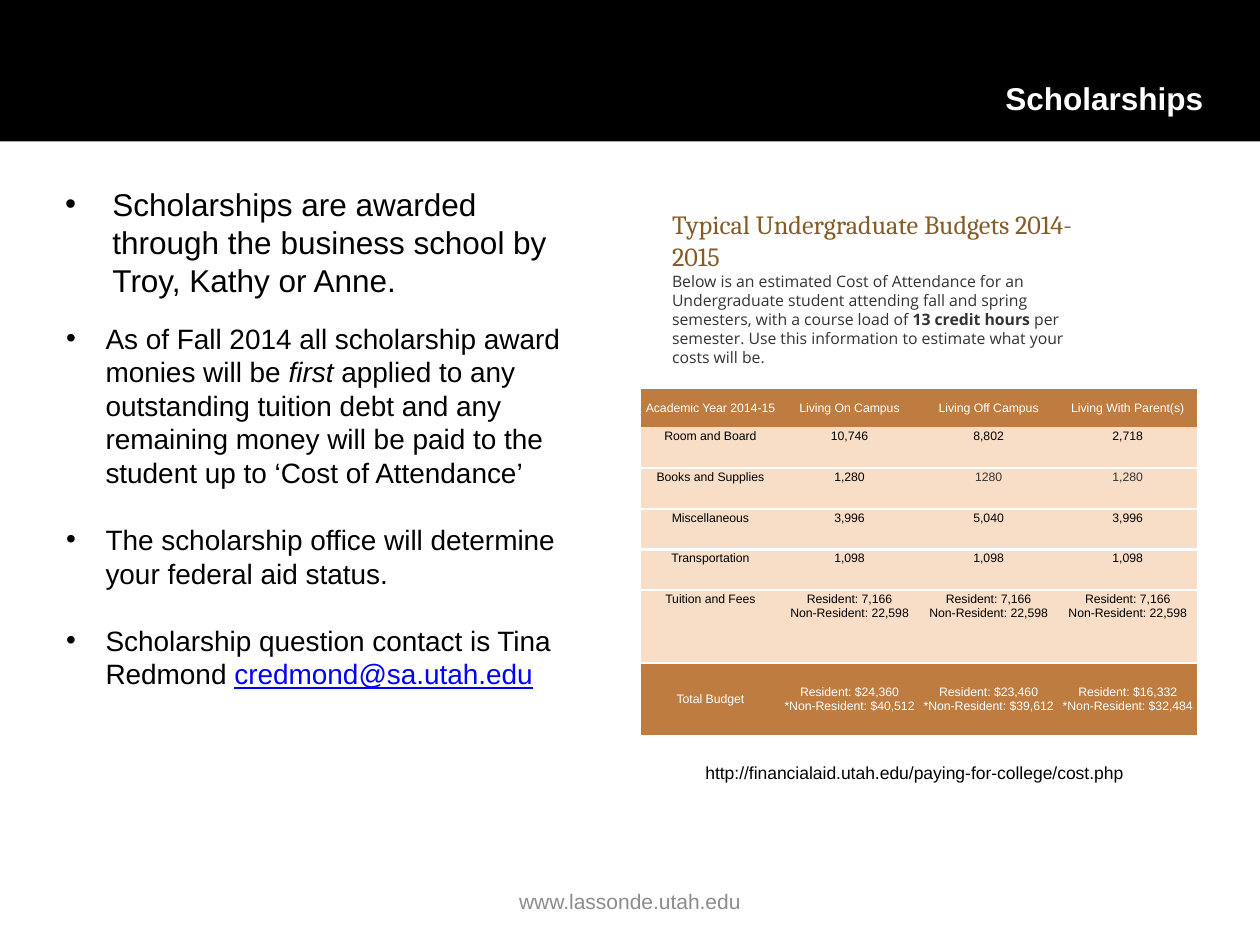
from lxml.etree import SubElement
from pptx import Presentation
from pptx.dml.color import RGBColor
from pptx.enum.shapes import MSO_SHAPE as Shape
from pptx.enum.text import MSO_ANCHOR as Anchor, PP_ALIGN as Align
from pptx.oxml.ns import qn
from pptx.util import Pt

COLORS = {
    "black": "000000", "white": "FFFFFF", "footer": "8C8C8C", "link": "0000FF",
    "heading": "855B27", "body": "333333", "band": "BF7C40", "row": "F8DEC7",
}
BUDGET = [
    ["Academic Year 2014-15", "Living On Campus", "Living Off Campus", "Living With Parent(s)"],
    ["Room and Board", "10,746", "8,802", "2,718"],
    ["Books and Supplies", "1,280", "1280", "1,280"],
    ["Miscellaneous", "3,996", "5,040", "3,996"],
    ["Transportation", "1,098", "1,098", "1,098"],
    ["Tuition and Fees"] + ["Resident: 7,166\nNon-Resident: 22,598"] * 3,
    ["Total Budget", "Resident: $24,360\n*Non-Resident: $40,512",
     "Resident: $23,460\n*Non-Resident: $39,612", "Resident: $16,332\n*Non-Resident: $32,484"],
]
ROW_HEIGHTS = [22] + [23.3] * 4 + [41.4] * 2
GRAY_CELLS = {(2, 2), (2, 3)}
PLAIN_TABLE_STYLE = "{2D5ABB26-0587-4C30-8999-92F81FD0307C}"


def rgb(name):
    """Return the named colour."""
    return RGBColor.from_string(COLORS[name])


def add_bullet(paragraph, indent):
    """Give a paragraph a hanging round bullet."""
    properties = paragraph._p.get_or_add_pPr()
    properties.set("marL", str(Pt(indent)))
    properties.set("indent", str(-Pt(indent)))
    SubElement(properties, qn("a:buFont"), typeface="Arial")
    SubElement(properties, qn("a:buChar"), char="•")


def write(frame, runs, size=16, color="black", font="Arial", align=Align.LEFT,
          bold=False, indent=0, after=0, new=False):
    """Write one paragraph of (text, run format) pairs into a text frame."""
    paragraph = frame.add_paragraph() if new else frame.paragraphs[0]
    paragraph.alignment = align
    paragraph.space_before = Pt(0)
    paragraph.space_after = Pt(after)
    if indent:
        add_bullet(paragraph, indent)
    for text, style in [(runs, {})] if isinstance(runs, str) else runs:
        for number, line in enumerate(text.split("\n")):
            if number:
                paragraph.add_line_break()
            run = paragraph.add_run()
            run.text = line
            run.font.name, run.font.size = font, Pt(size)
            run.font.color.rgb = rgb(style.get("color", color))
            run.font.bold = style.get("bold", bold)
            run.font.italic = style.get("italic", False)
            run.font.underline = style.get("underline", False)
    paragraph.font.size = Pt(size)


def add_text_box(slide, left, top, width, height, anchor=Anchor.TOP, inset=None):
    """Add a wrapping text box and return its text frame."""
    frame = slide.shapes.add_textbox(Pt(left), Pt(top), Pt(width), Pt(height)).text_frame
    frame.word_wrap = True
    frame.vertical_anchor = anchor
    if inset is not None:
        frame.margin_left = frame.margin_right = Pt(inset)
        frame.margin_top = frame.margin_bottom = Pt(inset)
    return frame


def add_header(slide):
    """Add the black band and the title on it."""
    band = slide.shapes.add_shape(Shape.RECTANGLE, 0, 0, Pt(720), Pt(80.8))
    band.shadow.inherit = False
    band.fill.solid()
    band.fill.fore_color.rgb = rgb("black")
    band.line.fill.background()
    title = slide.shapes.title
    title.left, title.top, title.width, title.height = Pt(522), Pt(41.8), Pt(172.8), Pt(36)
    title.text_frame.vertical_anchor = Anchor.TOP
    write(title.text_frame, "Scholarships", size=18, color="white", bold=True,
          align=Align.RIGHT)
    slide.shapes._spTree.append(title._element)


def add_awards(slide):
    """Add the bulleted scholarship rules."""
    intro = add_text_box(slide, 30.2, 102.2, 311.8, 75)
    write(intro, "Scholarships are awarded through the business school by Troy, Kathy or Anne.",
          size=18, indent=27)
    rules = add_text_box(slide, 30.7, 180, 306, 240)
    items = [
        [("As of Fall 2014 all scholarship award monies will be ", {}),
         ("first ", {"italic": True}),
         ("applied to any outstanding tuition debt and any remaining money "
          "will be paid to the student up to ‘Cost of Attendance’", {})],
        "The scholarship office will determine your federal aid status.",
        [("Scholarship question contact is Tina Redmond ", {}),
         ("credmond@sa.utah.edu", {"color": "link", "underline": True})],
    ]
    for index, item in enumerate(items):
        write(rules, item, indent=22.5, new=index > 0,
              after=19.1 if index < len(items) - 1 else 0)


def add_border(cell, edge):
    """Draw a white line on one edge of a cell."""
    properties = cell._tc.get_or_add_tcPr()
    line = properties.makeelement(qn(f"a:{edge}"), {"w": str(Pt(1.5))})
    fill = SubElement(line, qn("a:solidFill"))
    SubElement(fill, qn("a:srgbClr"), val=COLORS["white"])
    properties.insert(0, line)


def add_budget(slide):
    """Add the table of estimated costs."""
    last = len(BUDGET) - 1
    table = slide.shapes.add_table(len(BUDGET), len(BUDGET[0]), Pt(366.2), Pt(222.2),
                                   Pt(318), Pt(sum(ROW_HEIGHTS))).table
    table._tbl.tblPr.find(qn("a:tableStyleId")).text = PLAIN_TABLE_STYLE
    for row, height in zip(table.rows, ROW_HEIGHTS):
        row.height = Pt(height)
    for r, values in enumerate(BUDGET):
        banded = r in (0, last)
        for c, value in enumerate(values):
            cell = table.cell(r, c)
            cell.margin_left = cell.margin_right = Pt(2.6)
            cell.margin_top = cell.margin_bottom = Pt(1.3)
            cell.vertical_anchor = Anchor.MIDDLE if banded else Anchor.TOP
            cell.fill.solid()
            cell.fill.fore_color.rgb = rgb("band" if banded else "row")
            if 0 < r < last:
                add_border(cell, "lnB")
            if r > 1:
                add_border(cell, "lnT")
            color = "white" if banded else "body" if (r, c) in GRAY_CELLS else "black"
            write(cell.text_frame, value, size=7, color=color, align=Align.CENTER)


def add_budget_notes(slide):
    """Add the introduction above the table and the address below it."""
    intro = add_text_box(slide, 384, 119, 234, 90.7, Anchor.MIDDLE, inset=0)
    write(intro, "Typical Undergraduate Budgets 2014-2015", size=15, color="heading",
          font="Cambria")
    write(intro, [
        ("Below is an estimated Cost of Attendance for an Undergraduate student attending "
         "fall and spring semesters, with a course load of ", {}),
        ("13 credit hours", {"bold": True}),
        (" per semester. Use this information to estimate what your costs will be.", {}),
    ], size=9, color="body", font="Open Sans", new=True)
    address = add_text_box(slide, 396, 432, 258, 19.4)
    write(address, "http://financialaid.utah.edu/paying-for-college/cost.php", size=10)


def main():
    """Build and save the scholarships slide."""
    deck = Presentation()
    deck.slide_width, deck.slide_height = Pt(720), Pt(540)
    slide = deck.slides.add_slide(deck.slide_layouts[5])
    add_header(slide)
    add_awards(slide)
    footer = add_text_box(slide, 246, 500.5, 228, 28.8, Anchor.MIDDLE)
    write(footer, "www.lassonde.utah.edu", size=12, color="footer", align=Align.CENTER)
    add_budget(slide)
    add_budget_notes(slide)
    deck.save("out.pptx")


if __name__ == "__main__":
    main()
